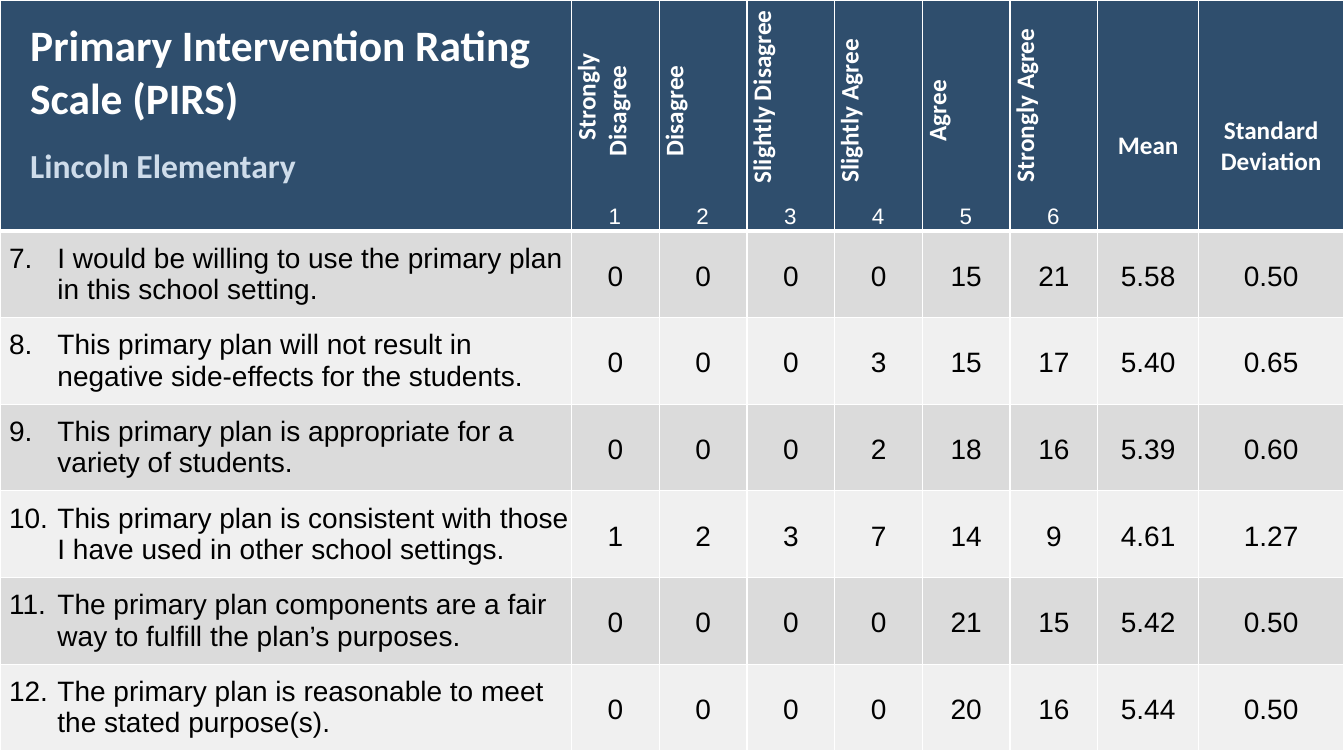
from lxml.etree import SubElement
from pptx import Presentation
from pptx.dml.color import RGBColor
from pptx.enum.text import MSO_ANCHOR as Anchor, MSO_AUTO_SIZE as AutoSize, PP_ALIGN as Align
from pptx.oxml import parse_xml
from pptx.oxml.ns import nsdecls, qn
from pptx.util import Pt

PX = 9144
WHITE, NAVY, PALE_BLUE = "FFFFFF", "2F4E6D", "CEDCEA"
BANDS = ["DBDBDB", "F0F0F0"]


def add_run(paragraph, text, size, font, color, bold=False):
    run = paragraph.add_run()
    run.text = text
    run.font.size = Pt(size)
    run.font.name = font
    run.font.bold = bold
    run.font.color.rgb = RGBColor.from_string(color)


def style_cell(cell, fill, margins, top=1, bottom=1):
    cell.margin_left, cell.margin_top, cell.margin_right, cell.margin_bottom = [m * PX for m in margins]
    properties = cell._tc.get_or_add_tcPr()
    for side, width in (("L", 1), ("R", 1), ("T", top), ("B", bottom)):
        properties.append(parse_xml(
            f'<a:ln{side} {nsdecls("a")} w="{Pt(width)}"><a:solidFill>'
            f'<a:srgbClr val="{WHITE}"/></a:solidFill></a:ln{side}>'))
    cell.fill.solid()
    cell.fill.fore_color.rgb = RGBColor.from_string(fill)


ratings = [("Strongly Disagree", 28), ("Disagree", 0), ("Slightly Disagree", 28),
           ("Slightly Agree", 0), ("Agree", 0), ("Strongly Agree", 11)]
statistics = ["Mean", "Standard Deviation"]
items = [
    ("7.", "I would be willing to use the primary plan in this school setting.",
     ["0", "0", "0", "0", "15", "21", "5.58", "0.50"]),
    ("8.", "This primary plan will not result in negative side-effects for the students.",
     ["0", "0", "0", "3", "15", "17", "5.40", "0.65"]),
    ("9.", "This primary plan is appropriate for a variety of students.",
     ["0", "0", "0", "2", "18", "16", "5.39", "0.60"]),
    ("10.", "This primary plan is consistent with those I have used in other school settings.",
     ["1", "2", "3", "7", "14", "9", "4.61", "1.27"]),
    ("11.", "The primary plan components are a fair way to fulfill the plan’s purposes.",
     ["0", "0", "0", "0", "21", "15", "5.42", "0.50"]),
    ("12.", "The primary plan is reasonable to meet the stated purpose(s).",
     ["0", "0", "0", "0", "20", "16", "5.44", "0.50"]),
]
column_widths = [567] + [87] * len(ratings) + [100, 144]
row_heights = [229] + [86] * len(items)

presentation = Presentation()
presentation.slide_width = 1333 * PX
presentation.slide_height = 750 * PX
slide = presentation.slides.add_slide(presentation.slide_layouts[6])

table = slide.shapes.add_table(len(row_heights), len(column_widths), 0, 0,
                               sum(column_widths) * PX, sum(row_heights) * PX).table
table.horz_banding = False
for column, width in zip(table.columns, column_widths):
    column.width = width * PX
for row, height in zip(table.rows, row_heights):
    row.height = height * PX

heading = table.cell(0, 0)
style_cell(heading, NAVY, (30, 20, 10, 5), bottom=3)
add_run(heading.text_frame.paragraphs[0], "Primary Intervention Rating Scale (PIRS)", 31, "Calibri", WHITE, True)
school = heading.text_frame.add_paragraph()
school.space_before = Pt(14.6)
add_run(school, "Lincoln Elementary", 24, "Calibri", PALE_BLUE, True)

for index, (label, first_line) in enumerate(ratings, 1):
    cell = table.cell(0, index)
    style_cell(cell, NAVY, (8, 0, 7, 0), bottom=3)
    cell.vertical_anchor = Anchor.MIDDLE
    cell._tc.tcPr.set("vert", "vert270")
    paragraph = cell.text_frame.paragraphs[0]
    paragraph.alignment = Align.CENTER
    indents = paragraph._p.get_or_add_pPr()
    indents.set("marL", str(8 * PX))
    indents.set("indent", str(first_line * PX))
    add_run(paragraph, label, 18, "Calibri", WHITE, True)

for index, label in enumerate(statistics, len(ratings) + 1):
    cell = table.cell(0, index)
    style_cell(cell, NAVY, (7, 61, 7, 0), bottom=3)
    cell.vertical_anchor = Anchor.MIDDLE
    paragraph = cell.text_frame.paragraphs[0]
    paragraph.alignment = Align.CENTER
    add_run(paragraph, label, 18, "Calibri", WHITE, True)

for row_index, (number, statement, values) in enumerate(items, 1):
    for column_index, text in enumerate([f"{number}\t{statement}"] + values):
        cell = table.cell(row_index, column_index)
        right = 0 if column_index == 0 else 7
        style_cell(cell, BANDS[(row_index - 1) % 2], (7, 0, right, 0), top=3 if row_index == 1 else 1)
        cell.vertical_anchor = Anchor.MIDDLE
        paragraph = cell.text_frame.paragraphs[0]
        if column_index == 0:
            indents = paragraph._p.get_or_add_pPr()
            indents.set("marL", str(50 * PX))
            indents.set("indent", str(-48 * PX))
        else:
            paragraph.alignment = Align.CENTER
            paragraph.line_spacing = 1.15
        add_run(paragraph, text, 20, "Arial", "000000")

scale = slide.shapes.add_textbox(575 * PX, 196 * PX, 517 * PX, 37 * PX)
scale.text_frame.word_wrap = True
scale.text_frame.auto_size = AutoSize.SHAPE_TO_FIT_TEXT
paragraph = scale.text_frame.paragraphs[0]
tabs = SubElement(paragraph._p.get_or_add_pPr(), qn("a:tabLst"))
for index in range(len(ratings)):
    SubElement(tabs, qn("a:tab"), pos=str((25 + 87 * index) * PX), algn="ctr")
add_run(paragraph, "".join(f"\t{index}" for index in range(1, len(ratings) + 1)), 16, "Arial", WHITE)

presentation.save("out.pptx")
